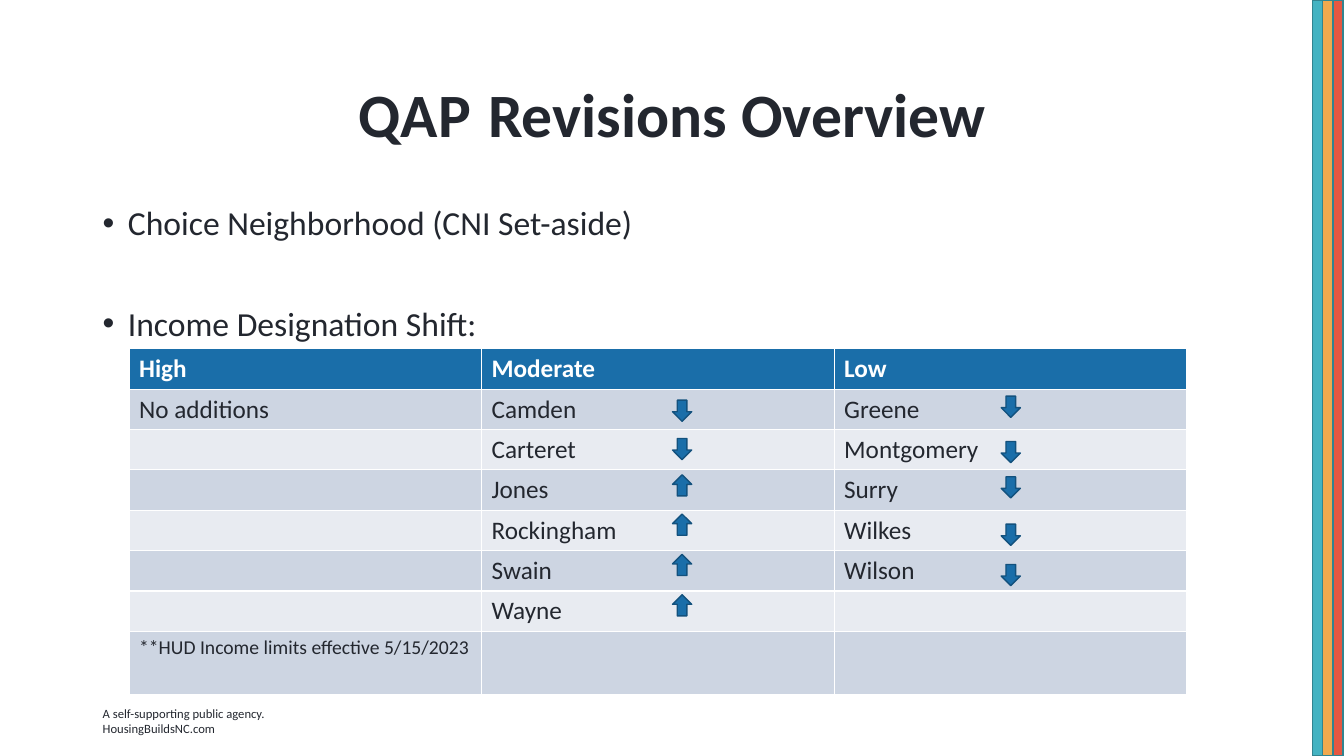
"""Build the QAP Revisions Overview slide with its income designation table."""
from dataclasses import dataclass

from lxml import etree
from pptx import Presentation
from pptx import util as u
from pptx.dml.color import RGBColor
from pptx.enum import shapes, text
from pptx.oxml import ns

FONT = "Calibri"
INK = RGBColor(0x23, 0x27, 0x2F)
WHITE = RGBColor(0xFF, 0xFF, 0xFF)
BLUE = RGBColor(0x1A, 0x6E, 0xA9)
DARK_BLUE = RGBColor(0x13, 0x51, 0x7D)
BAND_DARK = RGBColor(0xCD, 0xD5, 0xE2)
BAND_LIGHT = RGBColor(0xE8, 0xEB, 0xF1)
STRIPE_EDGE = RGBColor(0x32, 0x84, 0x90)
STRIPES = (RGBColor(0x44, 0xB3, 0xC2), RGBColor(0xF1, 0xA9, 0x4E), RGBColor(0xE6, 0x57, 0x41))
UP = shapes.MSO_SHAPE.UP_ARROW
DOWN = shapes.MSO_SHAPE.DOWN_ARROW


@dataclass(frozen=True)
class County:
    name: str
    shift: shapes.MSO_SHAPE
    arrow_top: float


@dataclass(frozen=True)
class Designation:
    level: str
    arrow_left: float = 0
    counties: tuple[County, ...] = ()
    remarks: tuple[tuple[int, str, int], ...] = ()


DESIGNATIONS = (
    Designation("High", remarks=((1, "No additions", 18),
                                 (7, "**HUD Income limits effective 5/15/2023", 14))),
    Designation("Moderate", 6.67, (
        County("Camden", DOWN, 3.97), County("Carteret", DOWN, 4.35),
        County("Jones", UP, 4.71), County("Rockingham", UP, 5.1),
        County("Swain", UP, 5.5), County("Wayne", UP, 5.9))),
    Designation("Low", 9.93, (
        County("Greene", DOWN, 3.93), County("Montgomery", DOWN, 4.38),
        County("Surry", DOWN, 4.73), County("Wilkes", DOWN, 5.2),
        County("Wilson", DOWN, 5.6))),
)
ROW_HEIGHTS = (0.4,) * 7 + (0.63,)


def style(run, size: float, color: RGBColor = INK, bold: bool = False) -> None:
    """Give a run its font, size, colour and weight."""
    run.font.name = FONT
    run.font.size = u.Pt(size)
    run.font.bold = bold
    run.font.color.rgb = color


def add_block(slide, kind, left: float, top: float, width: float, height: float,
              fill: RGBColor, edge: RGBColor) -> None:
    """Draw a filled preset shape with a thin outline."""
    block = slide.shapes.add_shape(
        kind, u.Inches(left), u.Inches(top), u.Inches(width), u.Inches(height))
    block.shadow.inherit = False
    block.fill.solid()
    block.fill.fore_color.rgb = fill
    block.line.color.rgb = edge
    block.line.width = u.Pt(1)


def add_lines(slide, left: float, top: float, width: float, height: float,
              lines: str, size: float):
    """Add a wrapping text box with one paragraph per line."""
    box = slide.shapes.add_textbox(
        u.Inches(left), u.Inches(top), u.Inches(width), u.Inches(height))
    box.text_frame.word_wrap = True
    box.text_frame.text = lines
    for paragraph in box.text_frame.paragraphs:
        style(paragraph.runs[0], size)
    return box.text_frame.paragraphs


def add_title(slide) -> None:
    """Place and format the title placeholder."""
    title = slide.shapes.title
    title.left, title.top = u.Inches(0.92), u.Inches(0.4)
    title.width, title.height = u.Inches(11.5), u.Inches(1.45)
    title.text_frame.vertical_anchor = text.MSO_ANCHOR.MIDDLE
    heading = title.text_frame.paragraphs[0]
    heading.alignment = text.PP_ALIGN.CENTER
    heading.line_spacing = 0.9
    for words, size in (("QAP", 44), (" ", 54), ("Revisions Overview", 44)):
        run = heading.add_run()
        run.text = words
        style(run, size, bold=True)


def add_topics(slide) -> None:
    """Add the two bulleted topics."""
    topics = add_lines(slide, 0.92, 2, 11.5, 1.45,
                       "Choice Neighborhood (CNI Set-aside)\nIncome Designation Shift:", 24)
    for topic in topics:
        properties = topic._p.get_or_add_pPr()
        properties.set("marL", str(u.Inches(0.25)))
        properties.set("indent", str(-u.Inches(0.25)))
        etree.SubElement(properties, ns.qn("a:buFont"), typeface="Arial")
        etree.SubElement(properties, ns.qn("a:buChar"), char="•")
        topic.line_spacing = 0.9
    topics[1].space_before = u.Pt(46)


def fill_cell(cell, words: str, size: float, color: RGBColor, bold: bool = False) -> None:
    """Write formatted words into a table cell."""
    cell.text_frame.text = words
    style(cell.text_frame.paragraphs[0].runs[0], size, color, bold)


def add_designations(slide) -> None:
    """Add the table of counties and the arrow beside each one."""
    table = slide.shapes.add_table(
        len(ROW_HEIGHTS), len(DESIGNATIONS), u.Inches(1.28), u.Inches(3.46),
        u.Inches(10.49), u.Inches(sum(ROW_HEIGHTS))).table
    for index, height in enumerate(ROW_HEIGHTS):
        table.rows[index].height = u.Inches(height)
        for cell in table.rows[index].cells:
            cell.fill.solid()
            band = BAND_DARK if index % 2 else BAND_LIGHT
            cell.fill.fore_color.rgb = band if index else BLUE
    for column, designation in enumerate(DESIGNATIONS):
        fill_cell(table.cell(0, column), designation.level, 18, WHITE, True)
        for row, words, size in designation.remarks:
            fill_cell(table.cell(row, column), words, size, INK)
        for row, county in enumerate(designation.counties, start=1):
            fill_cell(table.cell(row, column), county.name, 18, INK)
            add_block(slide, county.shift, designation.arrow_left, county.arrow_top,
                      0.19, 0.21, BLUE, DARK_BLUE)


def main() -> None:
    """Assemble and save the slide."""
    deck = Presentation()
    deck.slide_width, deck.slide_height = u.Inches(13.33), u.Inches(7.5)
    slide = deck.slides.add_slide(deck.slide_layouts[5])
    for index, color in enumerate(STRIPES):
        add_block(slide, shapes.MSO_SHAPE.RECTANGLE, 13.02 + 0.1 * index, 0, 0.1, 7.5,
                  color, STRIPE_EDGE)
    add_lines(slide, 0.92, 6.95, 3.08, 0.4,
              "A self-supporting public agency.\nHousingBuildsNC.com", 9)
    add_title(slide)
    add_topics(slide)
    add_designations(slide)
    deck.save("out.pptx")


if __name__ == "__main__":
    main()
